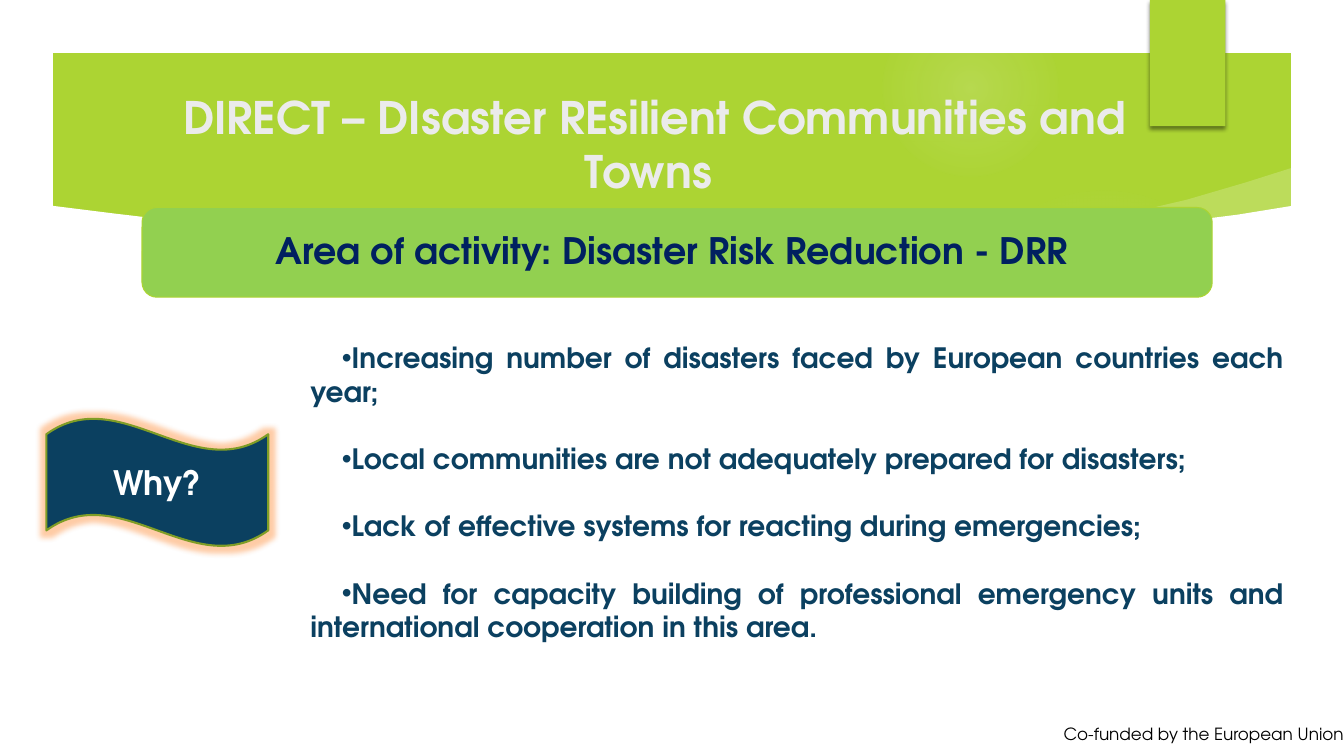
"""Builds the DIRECT project slide on the area of activity and its reasons."""
from dataclasses import dataclass
from typing import Any, NamedTuple, Optional

from pptx import Presentation
from pptx.dml.color import RGBColor
from pptx.enum.shapes import MSO_SHAPE
from pptx.enum.text import MSO_ANCHOR, MSO_AUTO_SIZE, PP_ALIGN
from pptx.oxml import parse_xml
from pptx.oxml.ns import nsdecls, qn
from pptx.util import Cm, Pt


@dataclass(frozen=True)
class Theme:
    font: str = "TeX Gyre Adventor"
    lime: str = "ACD433"
    green: str = "92D050"
    olive: str = "7F9D26"
    petrol: str = "0B4060"
    navy: str = "002060"
    white: str = "FFFFFF"
    pale: str = "EBEBEB"
    light: str = "F7F7F7"
    black: str = "000000"
    glow: str = "FF8021"
    title_pt: int = 32
    area_pt: int = 26
    why_pt: int = 24
    body_pt: int = 20
    note_pt: int = 12


class Box(NamedTuple):
    x: float
    y: float
    w: float
    h: float

    def lengths(self) -> tuple:
        return tuple(Cm(v) for v in self)


class Halo(NamedTuple):
    box: Box
    stops: tuple


class Outline(NamedTuple):
    points: tuple
    alpha: int


T = Theme()
WIDTH, HEIGHT = 33.87, 19.05
HALOS = (
    Halo(Box(23.9, 4.65, 7.82, 7.82), ((0, 7), (36, 6), (69, 0))),
    Halo(Box(22.23, 0, 4.45, 4.45), ((0, 14), (36, 7), (73, 0))),
)
SWOOSH = Outline(
    ((23.62, 6.17), (26.19, 5.82), (28.17, 5.44), (29.92, 5.03), (31.39, 4.6),
     (32.59, 4.22), (32.74, 5.44), (23.72, 6.35)), 20)
PANEL = Outline(
    ((1.27, 5.18), (2.87, 5.38), (5.49, 5.69), (8.15, 5.92), (11.28, 6.12),
     (14.2, 6.25), (17.32, 6.3), (20.65, 6.25), (24.1, 6.12), (26.92, 5.89),
     (29.77, 5.59), (31.19, 5.41), (32.61, 5.18), (32.61, 17.78), (1.27, 17.78)), 100)
REASONS = (
    "Increasing number of disasters faced by European countries each year;",
    "Local communities are not adequately prepared for disasters;",
    "Lack of effective systems for reacting during emergencies;",
    "Need for capacity building of professional emergency units and "
    "international cooperation in this area.",
)


def paint(s: Any, fill: Optional[str], line: Optional[str] = None, width: float = 0) -> None:
    """Set fill and line of a shape and clear its shadow."""
    if fill:
        s.fill.solid()
        s.fill.fore_color.rgb = RGBColor.from_string(fill)
    if line:
        s.line.color.rgb = RGBColor.from_string(line)
        s.line.width = Pt(width)
    else:
        s.line.fill.background()
    s.shadow.inherit = False


def add_shape(slide: Any, kind: MSO_SHAPE, box: Box, fill: Optional[str], **line: Any) -> Any:
    """Add a painted preset shape."""
    s = slide.shapes.add_shape(kind, *box.lengths())
    paint(s, fill, **line)
    return s


def add_halo(slide: Any, halo: Halo) -> None:
    """Add a circle that fades out from its centre."""
    s = add_shape(slide, MSO_SHAPE.OVAL, halo.box, None)
    stops = "".join(
        f'<a:gs pos="{pos * 1000}"><a:srgbClr val="{T.light}">'
        f'<a:alpha val="{alpha * 1000}"/></a:srgbClr></a:gs>'
        for pos, alpha in halo.stops)
    s.element.spPr.find(qn("a:prstGeom")).addnext(parse_xml(
        f'<a:gradFill {nsdecls("a")}><a:gsLst>{stops}</a:gsLst><a:path path="circle">'
        '<a:fillToRect l="50000" t="50000" r="50000" b="50000"/></a:path></a:gradFill>'))


def add_outline(slide: Any, outline: Outline) -> None:
    """Add a white freeform with the given opacity."""
    pts = [(Cm(x), Cm(y)) for x, y in outline.points]
    fb = slide.shapes.build_freeform(*pts[0])
    fb.add_line_segments(pts[1:], close=True)
    s = fb.convert_to_shape()
    paint(s, T.white)
    if outline.alpha < 100:
        clr = s.element.spPr.find(qn("a:solidFill")).find(qn("a:srgbClr"))
        clr.append(parse_xml(f'<a:alpha {nsdecls("a")} val="{outline.alpha * 1000}"/>'))


def add_effect(s: Any, tag: str, attrs: str, color: str, alpha: int) -> None:
    """Add a glow or shadow to a shape."""
    s.element.spPr.find(qn("a:effectLst")).append(parse_xml(
        f'<a:{tag} {nsdecls("a")} {attrs}><a:srgbClr val="{color}">'
        f'<a:alpha val="{alpha * 1000}"/></a:srgbClr></a:{tag}>'))


def write(p: Any, text: str, *, size: int, color: str, bold: bool = True,
          align: PP_ALIGN = PP_ALIGN.CENTER, before: int = 0) -> None:
    """Write one formatted run into a paragraph."""
    p.alignment = align
    p.space_before = Pt(before)
    r = p.add_run()
    r.text = text
    r.font.name = T.font
    r.font.size = Pt(size)
    r.font.bold = bold
    r.font.color.rgb = RGBColor.from_string(color)


def set_frame(s: Any, anchor: MSO_ANCHOR) -> Any:
    """Prepare a wrapping text frame and return it."""
    tf = s.text_frame
    tf.word_wrap = True
    tf.auto_size = MSO_AUTO_SIZE.NONE
    tf.vertical_anchor = anchor
    return tf


def place(slide: Any, ph: Any, box: Box) -> None:
    """Move a placeholder to a box in front of the shapes drawn so far."""
    ph.left, ph.top, ph.width, ph.height = box.lengths()
    slide.shapes.element.append(ph.element)


def add_backdrop(slide: Any) -> None:
    """Draw the lime band, white panel, frame and tab."""
    slide.background.fill.solid()
    slide.background.fill.fore_color.rgb = RGBColor.from_string(T.lime)
    for halo in HALOS:
        add_halo(slide, halo)
    for outline in (SWOOSH, PANEL):
        add_outline(slide, outline)
    frame = add_shape(slide, MSO_SHAPE.FRAME, Box(0, 0, WIDTH, HEIGHT), T.white)
    frame.adjustments[0] = 0.07
    tab = add_shape(slide, MSO_SHAPE.RECTANGLE, Box(28.98, 0, 1.9, 3.18), T.lime)
    add_effect(tab, "outerShdw", f'blurRad="{Pt(3)}" dist="{Pt(2)}" dir="5400000"', T.black, 45)


def add_reasons(slide: Any, body: Any) -> None:
    """Fill the body placeholder with the bulleted reasons."""
    place(slide, body, Box(6.78, 8.46, 25.83, 9.5))
    tf = set_frame(body, MSO_ANCHOR.TOP)
    for i, reason in enumerate(REASONS):
        p = tf.add_paragraph() if i else tf.paragraphs[0]
        pPr = p._p.get_or_add_pPr()
        pPr.set("marL", str(Cm(0.79)))
        pPr.set("indent", str(Cm(0.79)))
        pPr.append(parse_xml(f'<a:buFont {nsdecls("a")} typeface="Arial"/>'))
        pPr.append(parse_xml(f'<a:buChar {nsdecls("a")} char="•"/>'))
        write(p, reason, size=T.body_pt, color=T.petrol,
              align=PP_ALIGN.JUSTIFY, before=24 if i else 0)


def main() -> None:
    """Build and save the slide."""
    prs = Presentation()
    prs.slide_width, prs.slide_height = Cm(WIDTH), Cm(HEIGHT)
    slide = prs.slides.add_slide(prs.slide_layouts[1])
    title, body = slide.shapes.title, slide.placeholders[1]
    add_backdrop(slide)

    place(slide, title, Box(4.34, 2.64, 24.33, 1.96))
    write(set_frame(title, MSO_ANCHOR.MIDDLE).paragraphs[0],
          "DIRECT – DIsaster REsilient Communities and Towns ", size=T.title_pt, color=T.pale)

    area = add_shape(slide, MSO_SHAPE.ROUNDED_RECTANGLE, Box(3.58, 5.23, 26.97, 2.26),
                     T.green, line=T.lime, width=0.75)
    p = set_frame(area, MSO_ANCHOR.MIDDLE).paragraphs[0]
    p.line_spacing = 0.9
    write(p, "Area of activity: Disaster Risk Reduction - DRR ", size=T.area_pt, color=T.navy)

    why = add_shape(slide, MSO_SHAPE.WAVE, Box(1.17, 10.54, 5.59, 3.23),
                    T.petrol, line=T.olive, width=1.5)
    add_effect(why, "glow", f'rad="{Pt(8)}"', T.glow, 40)
    write(set_frame(why, MSO_ANCHOR.MIDDLE).paragraphs[0], "Why?", size=T.why_pt, color=T.white)

    add_reasons(slide, body)

    note = slide.shapes.add_textbox(*Box(25.35, 18.11, 8.52, 0.76).lengths())
    tf = set_frame(note, MSO_ANCHOR.TOP)
    tf.margin_right = 0
    write(tf.paragraphs[0], "Co-funded by the European Union", size=T.note_pt,
          color=T.black, bold=False, align=PP_ALIGN.RIGHT)
    prs.save("out.pptx")


if __name__ == "__main__":
    main()
